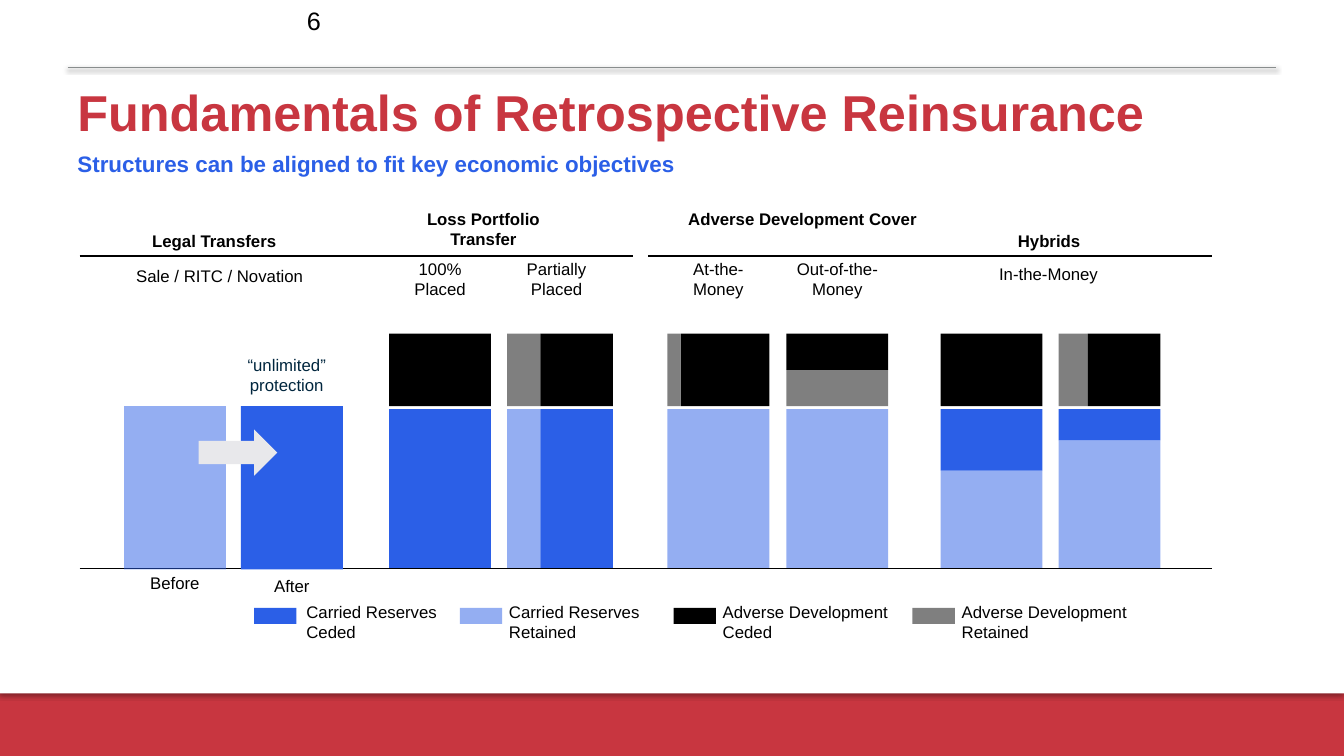
from lxml import etree
from pptx import Presentation
from pptx.dml.color import RGBColor
from pptx.enum.shapes import MSO_CONNECTOR, MSO_SHAPE
from pptx.enum.text import MSO_ANCHOR, PP_ALIGN
from pptx.oxml.ns import qn
from pptx.util import Inches, Pt

RED, BLUE, BLACK, WHITE = "C83640", "2B5FE7", "000000", "FFFFFF"
# Fill of each kind of reserve: colour and opacity in percent
RESERVES_CEDED, RESERVES_RETAINED = (BLUE, 100), (BLUE, 50)
ADVERSE_CEDED, ADVERSE_RETAINED = (BLACK, 100), (BLACK, 50)
BAR_WIDTH = 1.01


def rgb(code):
    return RGBColor.from_string(code)


def add_block(slide, left, top, width, height, fill, kind=MSO_SHAPE.RECTANGLE):
    color, opacity = fill
    block = slide.shapes.add_shape(
        kind, Inches(left), Inches(top), Inches(width), Inches(height))
    block.shadow.inherit = False
    block.line.fill.background()
    block.fill.solid()
    block.fill.fore_color.rgb = rgb(color)
    if opacity < 100:
        color_node = block.fill._xPr.find(qn("a:solidFill"))[0]
        etree.SubElement(color_node, qn("a:alpha"), val=str(opacity * 1000))
    return block


def add_rule(slide, left, right, y, color=BLACK):
    rule = slide.shapes.add_connector(
        MSO_CONNECTOR.STRAIGHT, Inches(left), Inches(y), Inches(right), Inches(y))
    rule.line.color.rgb = rgb(color)
    rule.line.width = Pt(0.75)
    etree.SubElement(rule._element.spPr, qn("a:effectLst"))
    return rule


def drop_shadow(part, distance, opacity):
    effects = part._element.spPr.find(qn("a:effectLst"))
    shadow = etree.SubElement(
        effects, qn("a:outerShdw"), blurRad=str(Pt(3.1)), dist=str(Pt(distance)),
        dir="5400000", rotWithShape="0")
    tint = etree.SubElement(shadow, qn("a:srgbClr"), val=BLACK)
    etree.SubElement(tint, qn("a:alpha"), val=str(opacity * 1000))


def add_text(slide, left, top, width, height, lines, size=12, color=BLACK,
             bold=False, align=PP_ALIGN.CENTER, anchor=MSO_ANCHOR.TOP):
    frame = slide.shapes.add_textbox(
        Inches(left), Inches(top), Inches(width), Inches(height)).text_frame
    frame.word_wrap = True
    frame.vertical_anchor = anchor
    frame.text = lines
    for paragraph in frame.paragraphs:
        paragraph.alignment = align
        paragraph.font.name = "Arial"
        paragraph.font.size = Pt(size)
        paragraph.font.bold = bold
        paragraph.font.color.rgb = rgb(color)


def add_frame(slide, width, height):
    """Red footer band below a white page, with the rule at the top."""
    add_block(slide, 0, 0, width, height, (RED, 100))
    page = add_block(slide, 0, 0, width, height - 0.62, (WHITE, 100))
    drop_shadow(page, 1.8, 35)
    top_rule = add_rule(slide, 0.67, 12.66, 0.67, "898D8D")
    drop_shadow(top_rule, 1.6, 38)
    add_text(slide, 0, 0, 3.28, 0.4, "6", 18, align=PP_ALIGN.RIGHT)


def add_heading(slide, left, top, width):
    add_text(slide, left, top, width, 0.53, "Fundamentals of Retrospective Reinsurance",
             36, RED, True, PP_ALIGN.LEFT, MSO_ANCHOR.MIDDLE)
    add_text(slide, left, top + 0.6, width, 0.59,
             "Structures can be aligned to fit key economic objectives",
             16, BLUE, True, PP_ALIGN.LEFT)


def add_column_heads(slide, left, right, y):
    """Structure names above a split rule, variants below it."""
    for start, width, rise, name in [
        (0.85, 2.55, 0.3, "Legal Transfers"),
        (3.32, 2.95, 0.52, "Loss Portfolio\nTransfer"),
        (6.62, 2.68, 0.52, "Adverse Development Cover"),
        (9.33, 2.15, 0.3, "Hybrids"),
    ]:
        add_text(slide, start, y - rise, width, rise, name, bold=True)
    add_rule(slide, left, 6.28, y)
    add_rule(slide, 6.43, right, y)
    for start, width, drop, name in [
        (1.09, 2.18, 0.05, "Sale / RITC / Novation"),
        (3.86, BAR_WIDTH, -0.02, "100% Placed"),
        (4.93, 1.18, -0.02, "Partially Placed"),
        (6.62, BAR_WIDTH, -0.02, "At-the-Money"),
        (7.8, BAR_WIDTH, -0.02, "Out-of-the-Money"),
        (9.31, 2.18, 0.03, "In-the-Money"),
    ]:
        add_text(slide, start, y + drop, width, 0.53, name)


def add_split_bar(slide, left, top, width, height, direction, parts):
    """Divide a box into parts, across ("x") or downwards ("y")."""
    for size, fill in parts:
        if direction == "x":
            add_block(slide, left, top, size, height, fill)
            left += size
        else:
            add_block(slide, left, top, width, size, fill)
            top += size


def add_structure_bars(slide, top, baseline):
    """Adverse development stacked over carried reserves."""
    adverse, gap = 0.72, 0.03
    reserves_top = top + adverse + gap
    reserves = baseline - reserves_top
    for left, width, upper, lower in [
        (3.86, BAR_WIDTH, ("y", [(adverse, ADVERSE_CEDED)]),
         ("y", [(reserves, RESERVES_CEDED)])),
        (5.03, 1.05, ("x", [(0.33, ADVERSE_RETAINED), (0.72, ADVERSE_CEDED)]),
         ("x", [(0.33, RESERVES_RETAINED), (0.72, RESERVES_CEDED)])),
        (6.62, BAR_WIDTH, ("x", [(0.13, ADVERSE_RETAINED), (0.88, ADVERSE_CEDED)]),
         ("y", [(reserves, RESERVES_RETAINED)])),
        (7.8, BAR_WIDTH, ("y", [(0.36, ADVERSE_CEDED), (0.36, ADVERSE_RETAINED)]),
         ("y", [(reserves, RESERVES_RETAINED)])),
        (9.33, BAR_WIDTH, ("y", [(adverse, ADVERSE_CEDED)]),
         ("y", [(0.61, RESERVES_CEDED), (reserves - 0.61, RESERVES_RETAINED)])),
        (10.5, BAR_WIDTH, ("x", [(0.29, ADVERSE_RETAINED), (0.72, ADVERSE_CEDED)]),
         ("y", [(0.31, RESERVES_CEDED), (reserves - 0.31, RESERVES_RETAINED)])),
    ]:
        add_split_bar(slide, left, top, width, adverse, *upper)
        add_split_bar(slide, left, reserves_top, width, reserves, *lower)


def add_legal_transfer(slide, left, top, height):
    """Before and after bars joined by an arrow."""
    after = left + 1.16
    for start, fill, name, label_gap in [
        (left, RESERVES_RETAINED, "Before", -0.02),
        (after, RESERVES_CEDED, "After", 0.01),
    ]:
        add_block(slide, start, top, BAR_WIDTH, height, fill)
        add_text(slide, start, top + height + label_gap, BAR_WIDTH, 0.32, name)
    add_block(slide, left + 0.74, top + 0.23, 0.78, 0.46, ("E8E8EB", 100),
              MSO_SHAPE.RIGHT_ARROW)
    add_text(slide, left + 0.9, top - 0.56, 1.43, 0.53,
             "“unlimited” protection", color="00263E")


def add_legend(slide, top):
    for left, fill, name, label_width in [
        (2.52, RESERVES_CEDED, "Carried Reserves Ceded", 1.57),
        (4.56, RESERVES_RETAINED, "Carried Reserves Retained", 1.57),
        (6.68, ADVERSE_CEDED, "Adverse Development Ceded", 1.9),
        (9.05, ADVERSE_RETAINED, "Adverse Development Retained", 1.9),
    ]:
        add_block(slide, left, top + 0.11, 0.42, 0.16, fill)
        label_left = left + (0.42 if fill == RESERVES_CEDED else 0.39)
        add_text(slide, label_left, top, label_width, 0.53, name, align=PP_ALIGN.LEFT)


def main():
    deck = Presentation()
    deck.slide_width, deck.slide_height = Inches(13.33), Inches(7.5)
    slide = deck.slides.add_slide(deck.slide_layouts[6])
    left, right, baseline = 0.79, 12.02, 5.64

    add_frame(slide, 13.33, 7.5)
    add_heading(slide, 0.67, 0.84, 11.99)
    add_column_heads(slide, left, right, 2.54)
    add_structure_bars(slide, 3.31, baseline)
    add_rule(slide, left, right, baseline)
    add_legal_transfer(slide, 1.23, 4.03, 1.62)
    add_legend(slide, 5.92)
    deck.save("out.pptx")


if __name__ == "__main__":
    main()
